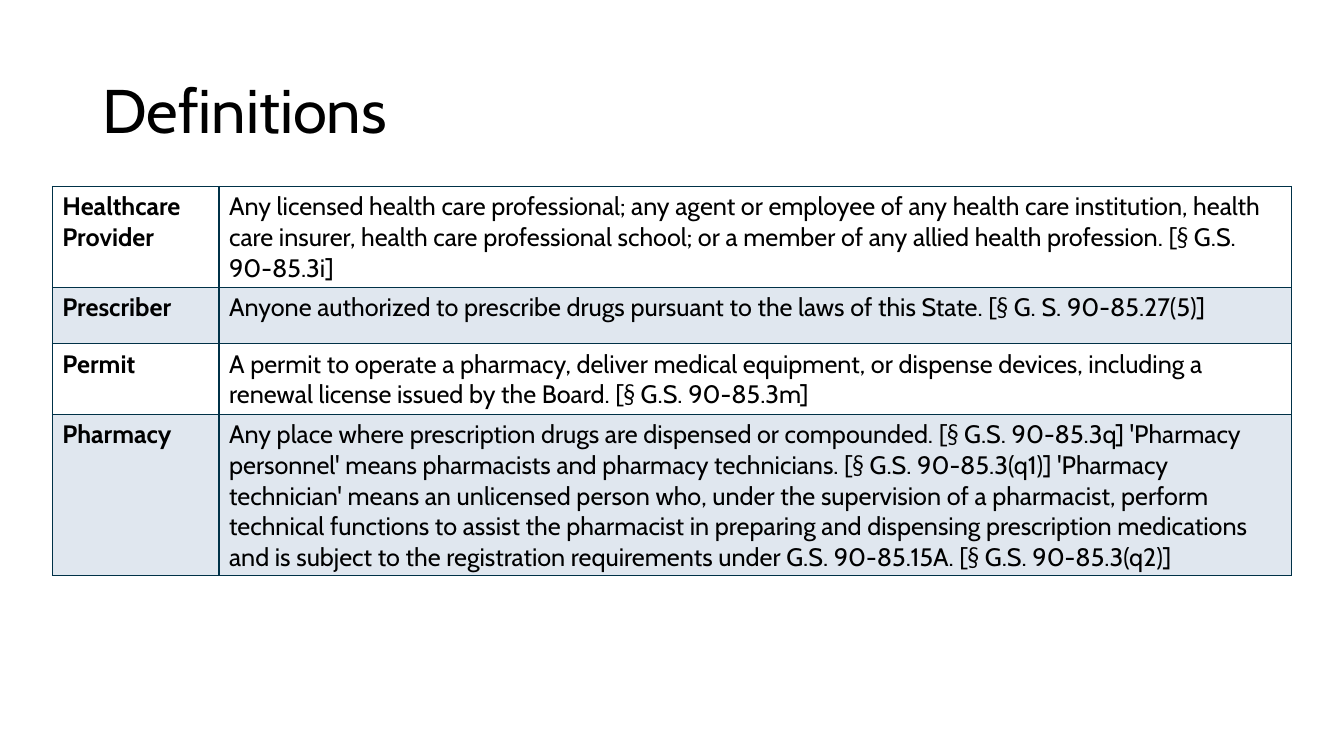
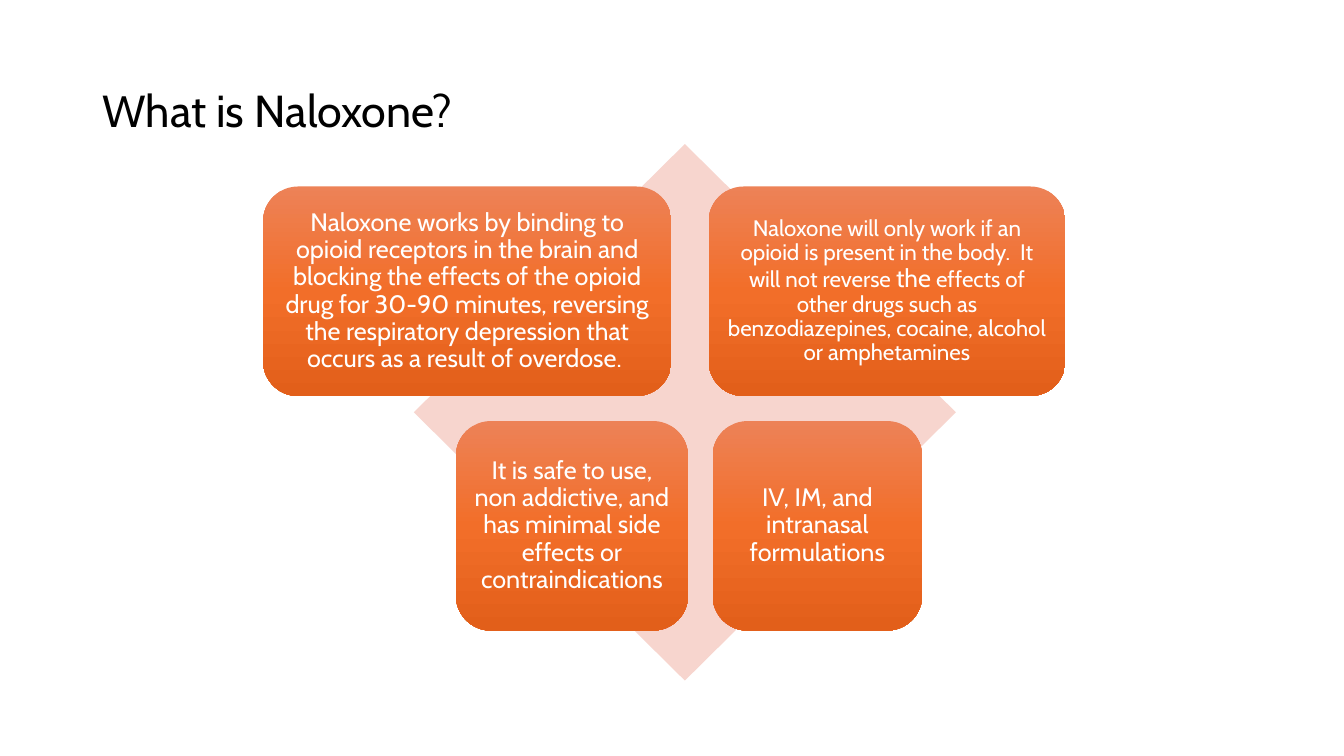
from lxml import etree
from pptx import Presentation
from pptx.dml.color import RGBColor as RGB
from pptx.enum.shapes import MSO_SHAPE as SHAPE
from pptx.enum.text import MSO_ANCHOR as ANCHOR, PP_ALIGN as ALIGN
from pptx.oxml import parse_xml
from pptx.oxml.ns import nsdecls, qn
from pptx.util import Cm, Pt

FONT = "Cabin"
COLORS = {
    "text": "000000",
    "border": "003147",
    "band": "6887B3",
    "diamond": "F7D5CE",
    "card_text": "FFFFFF",
    "card_top": "ED8257",
    "card_mid": "F26E29",
    "card_end": "E25F1A",
}
BAND_ALPHA = 20000
DEFINITIONS = [
    ("Healthcare Provider",
     "Any licensed health care professional; any agent or employee of any health care "
     "institution, health care insurer, health care professional school; or a member of "
     "any allied health profession. [§ G.S. 90-85.3i]"),
    ("Prescriber",
     "Anyone authorized to prescribe drugs pursuant to the laws of this State. "
     "[§ G. S. 90-85.27(5)]"),
    ("Permit",
     "A permit to operate a pharmacy, deliver medical equipment, or dispense devices, "
     "including a renewal license issued by the Board. [§ G.S. 90-85.3m]"),
    ("Pharmacy",
     "Any place where prescription drugs are dispensed or compounded. [§ G.S. 90-85.3q] "
     "'Pharmacy personnel' means pharmacists and pharmacy technicians. "
     "[§ G.S. 90-85.3(q1)] 'Pharmacy technician' means an unlicensed person who, under "
     "the supervision of a pharmacist, perform technical functions to assist the "
     "pharmacist in preparing and dispensing prescription medications and is subject to "
     "the registration requirements under G.S. 90-85.15A. [§ G.S. 90-85.3(q2)]"),
]
# Row, left and width in cm, then (text, size) runs
CARDS = [
    (0, 6.63, 10.29, [
        ("Naloxone works by binding to opioid receptors in the brain and blocking the "
         "effects of the opioid drug for 30-90 minutes, reversing the respiratory "
         "depression that occurs as a result of overdose. ", 18)]),
    (0, 17.86, 8.99, [
        ("Naloxone will only work if an opioid is present in the body.  It will not "
         "reverse ", 16),
        ("the", 18),
        (" effects of other drugs such as benzodiazepines, cocaine, alcohol or "
         "amphetamines", 16)]),
    (1, 11.49, 5.85, [
        ("It is safe to use, non addictive, and has minimal side effects or "
         "contraindications", 18)]),
    (1, 17.96, 5.28, [("IV, IM, and intranasal formulations", 18)]),
]
CARD_TOP, CARD_HEIGHT, CARD_GAP = 4.7, 5.28, 0.63


def write(tf, runs, color="text", bold=False, **para_format):
    """Fill the first paragraph of tf with (text, size) runs."""
    p = tf.paragraphs[0]
    for name, value in para_format.items():
        setattr(p, name, value)
    for text, size in runs:
        r = p.add_run()
        r.text = text
        for name, value in {"name": FONT, "size": Pt(size), "bold": bold}.items():
            setattr(r.font, name, value)
        r.font.color.rgb = RGB.from_string(COLORS[color])


def add_titled_slide(title, size):
    s = prs.slides.add_slide(prs.slide_layouts[6])
    tf = s.shapes.add_textbox(Cm(2.33), Cm(1.02), Cm(29.21), Cm(3.68)).text_frame
    tf.word_wrap = True
    tf.vertical_anchor = ANCHOR.MIDDLE
    write(tf, [(title, size)], line_spacing=0.9)
    return s


prs = Presentation()
prs.slide_width, prs.slide_height = Cm(33.87), Cm(19.05)

# Definitions table
s = add_titled_slide("Definitions", 44)
col_widths, row_height = (4.2, 27.02), 1.42
table = s.shapes.add_table(
    len(DEFINITIONS), 2, Cm(1.32), Cm(4.7),
    Cm(sum(col_widths)), Cm(row_height * len(DEFINITIONS))).table
table.first_row = table.horz_banding = False
for column, width in zip(table.columns, col_widths):
    column.width = Cm(width)

for i, texts in enumerate(DEFINITIONS):
    for j, text in enumerate(texts):
        cell = table.cell(i, j)
        write(cell.text_frame, [(text, 18)], bold=j == 0)
        tc_pr = cell._tc.get_or_add_tcPr()
        if i % 2:
            cell.fill.solid()
            cell.fill.fore_color.rgb = RGB.from_string(COLORS["band"])
            rgb = tc_pr.find(".//" + qn("a:srgbClr"))
            etree.SubElement(rgb, qn("a:alpha"), val=str(BAND_ALPHA))
        else:
            cell.fill.background()
        for k, side in enumerate("LRTB"):
            tc_pr.insert(k, parse_xml(
                f'<a:ln{side} {nsdecls("a")} w="12700"><a:solidFill>'
                f'<a:srgbClr val="{COLORS["border"]}"/></a:solidFill></a:ln{side}>'))

# Four cards over a diamond
s = add_titled_slide("What is Naloxone?", 32)
diamond = s.shapes.add_shape(SHAPE.DIAMOND, Cm(10.43), Cm(3.63), Cm(13.66), Cm(13.52))
diamond.shadow.inherit = False
diamond.fill.solid()
diamond.fill.fore_color.rgb = RGB.from_string(COLORS["diamond"])
diamond.line.fill.background()

for row, left, width, runs in CARDS:
    top = CARD_TOP + row * (CARD_HEIGHT + CARD_GAP)
    sp = s.shapes.add_shape(
        SHAPE.ROUNDED_RECTANGLE, Cm(left), Cm(top), Cm(width), Cm(CARD_HEIGHT))
    sp.shadow.inherit = False
    sp.line.fill.background()
    sp.fill.gradient()
    sp.fill.gradient_angle = 270
    stops = sp._element.spPr.find(".//" + qn("a:gsLst"))
    for stop in list(stops):
        stops.remove(stop)
    for pos, name in ((0, "card_top"), (50000, "card_mid"), (100000, "card_end")):
        stop = etree.SubElement(stops, qn("a:gs"), pos=str(pos))
        etree.SubElement(stop, qn("a:srgbClr"), val=COLORS[name])
    tf = sp.text_frame
    tf.word_wrap = True
    tf.vertical_anchor = ANCHOR.MIDDLE
    for side in ("left", "right", "top", "bottom"):
        setattr(tf, f"margin_{side}", Cm(0.18))
    write(tf, runs, "card_text", alignment=ALIGN.CENTER, line_spacing=0.9)

prs.save("out.pptx")
